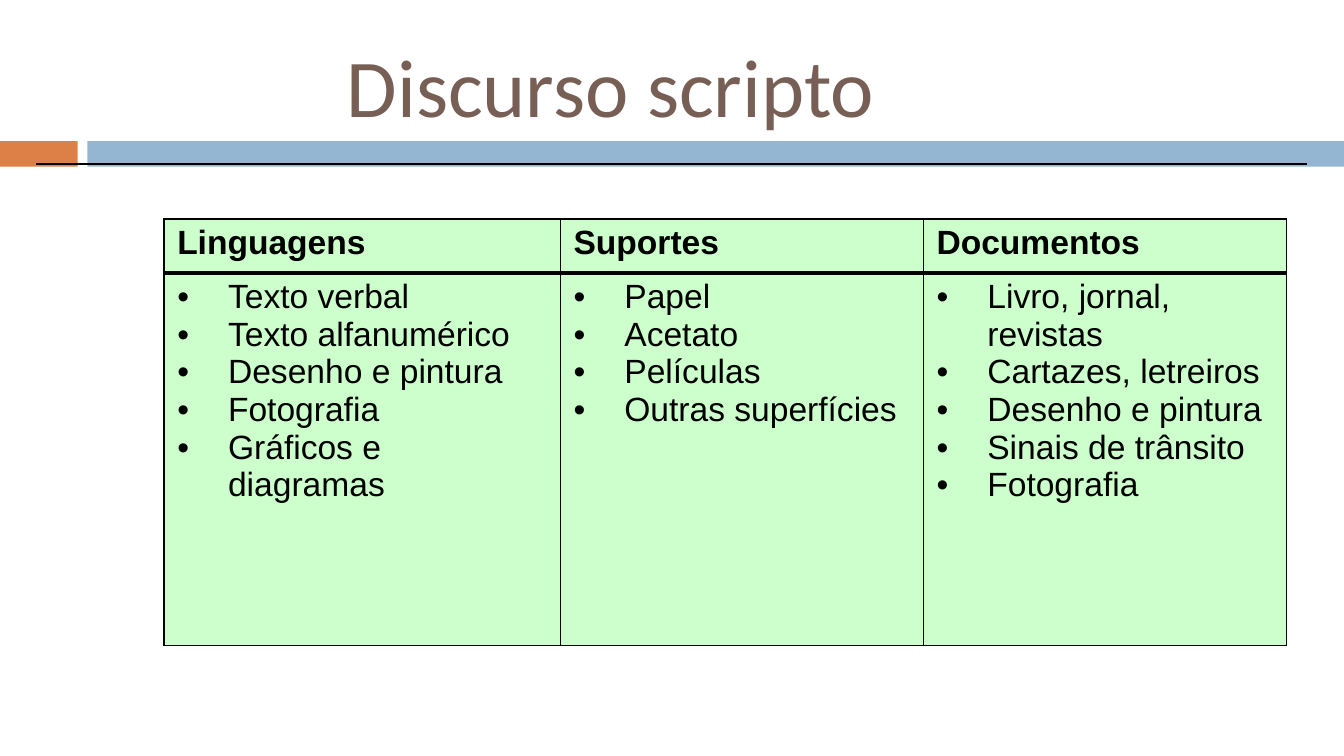
from dataclasses import dataclass

from lxml.etree import SubElement
from pptx import Presentation
from pptx.dml.color import RGBColor as Rgb
from pptx.enum.shapes import MSO_CONNECTOR as Connector, MSO_SHAPE as Preset
from pptx.enum.text import MSO_ANCHOR as Anchor, MSO_AUTO_SIZE as AutoSize, PP_ALIGN as Align
from pptx.oxml import parse_xml
from pptx.oxml.ns import nsdecls, qn
from pptx.util import Cm, Pt


@dataclass(frozen=True)
class Theme:
    orange: str = "DD8047"
    blue: str = "94B6D2"
    brown: str = "775F55"
    green: str = "CCFFCC"
    black: str = "000000"
    title_font: str = "Calibri"
    table_font: str = "Arial"
    title_size: int = 44
    table_size: int = 18
    rule_width: float = 0.75
    border_width: int = 1
    header_border_width: int = 2
    hanging_indent: float = 0.96


COLUMNS = [
    ("Linguagens", 7.49, Align.LEFT,
     ["Texto verbal", "Texto alfanumérico", "Desenho e pintura", "Fotografia",
      "Gráficos e diagramas"]),
    ("Suportes", 6.86, Align.JUSTIFY,
     ["Papel", "Acetato", "Películas", "Outras superfícies"]),
    ("Documentos", 6.86, Align.LEFT,
     ["Livro, jornal, revistas", "Cartazes, letreiros", "Desenho e pintura",
      "Sinais de trânsito", "Fotografia"]),
]
ROW_HEIGHTS = (1.02, 7.04)


class SlideBuilder:
    """Adds styled elements to one slide; lengths are in centimetres."""

    def __init__(self, slide, theme):
        self.slide = slide
        self.theme = theme

    def text_run(self, paragraph, text, font, size, color, bold=False):
        run = paragraph.add_run()
        run.text = text
        run.font.name = font
        run.font.size = Pt(size)
        run.font.bold = bold
        run.font.color.rgb = Rgb.from_string(color)

    def bar(self, left, top, width, height, color):
        band = self.slide.shapes.add_shape(
            Preset.RECTANGLE, Cm(left), Cm(top), Cm(width), Cm(height))
        band.shadow.inherit = False
        band.fill.solid()
        band.fill.fore_color.rgb = Rgb.from_string(color)
        band.line.fill.background()

    def title(self, text, left, top, width, height):
        heading = self.slide.shapes.title
        heading.left, heading.top = Cm(left), Cm(top)
        heading.width, heading.height = Cm(width), Cm(height)
        frame = heading.text_frame
        frame.auto_size = AutoSize.NONE
        frame.vertical_anchor = Anchor.MIDDLE
        paragraph = frame.paragraphs[0]
        paragraph.alignment = Align.LEFT
        self.text_run(paragraph, text, self.theme.title_font, self.theme.title_size,
                      self.theme.brown)

    def rule(self, left, right, height):
        rule = self.slide.shapes.add_connector(
            Connector.STRAIGHT, Cm(left), Cm(height), Cm(right), Cm(height))
        rule.line.color.rgb = Rgb.from_string(self.theme.black)
        rule.line.width = Pt(self.theme.rule_width)
        SubElement(rule._element.spPr, qn("a:effectLst"))

    def table(self, left, top, columns, row_heights):
        total_width = sum(width for _, width, _, _ in columns)
        table = self.slide.shapes.add_table(
            len(row_heights), len(columns), Cm(left), Cm(top),
            Cm(total_width), Cm(sum(row_heights))).table
        for row, height in zip(table.rows, row_heights):
            row.height = Cm(height)
        for index, (heading, width, alignment, items) in enumerate(columns):
            table.columns[index].width = Cm(width)
            self.cell(table.cell(0, index), [heading], alignment, is_header=True)
            self.cell(table.cell(1, index), items, Align.LEFT)

    def cell(self, cell, lines, alignment, is_header=False):
        theme = self.theme
        cell.fill.solid()
        cell.fill.fore_color.rgb = Rgb.from_string(theme.green)
        cell.margin_left = cell.margin_right = Cm(0.25)
        cell.margin_top = cell.margin_bottom = Cm(0.1)
        self.borders(cell, heavy_side="B" if is_header else "T")
        frame = cell.text_frame
        for index, line in enumerate(lines):
            paragraph = frame.add_paragraph() if index else frame.paragraphs[0]
            paragraph.alignment = alignment
            self.hang(paragraph, bulleted=not is_header)
            self.text_run(paragraph, line, theme.table_font, theme.table_size,
                          theme.black, bold=is_header)

    def borders(self, cell, heavy_side):
        """Draw all four sides, the one shared by header and body thicker."""
        properties = cell._tc.get_or_add_tcPr()
        for position, side in enumerate("LRTB"):
            width = (self.theme.header_border_width if side == heavy_side
                     else self.theme.border_width)
            properties.insert(position, parse_xml(
                f'<a:ln{side} {nsdecls("a")} w="{Pt(width)}"><a:solidFill>'
                f'<a:srgbClr val="{self.theme.black}"/></a:solidFill></a:ln{side}>'))

    def hang(self, paragraph, bulleted):
        """Give a hanging indent, with a bullet if wanted."""
        properties = paragraph._p.get_or_add_pPr()
        indent = Cm(self.theme.hanging_indent)
        properties.set("marL", str(indent))
        properties.set("indent", str(-indent))
        if bulleted:
            SubElement(properties, qn("a:buFont"), typeface=self.theme.table_font)
            SubElement(properties, qn("a:buChar"), char="•")


def main():
    deck = Presentation()
    deck.slide_width, deck.slide_height = Cm(25.4), Cm(14.29)
    title_only = deck.slide_layouts[5]
    theme = Theme()
    builder = SlideBuilder(deck.slides.add_slide(title_only), theme)

    builder.bar(0, 2.67, 1.47, 0.48, theme.orange)
    builder.bar(1.65, 2.67, 23.75, 0.48, theme.blue)
    builder.title("Discurso scripto", 6.3, 0.25, 15.93, 2.69)
    builder.table(3.1, 4.14, COLUMNS, ROW_HEIGHTS)
    builder.rule(0.69, 24.71, 3.1)

    deck.save("out.pptx")


if __name__ == "__main__":
    main()
